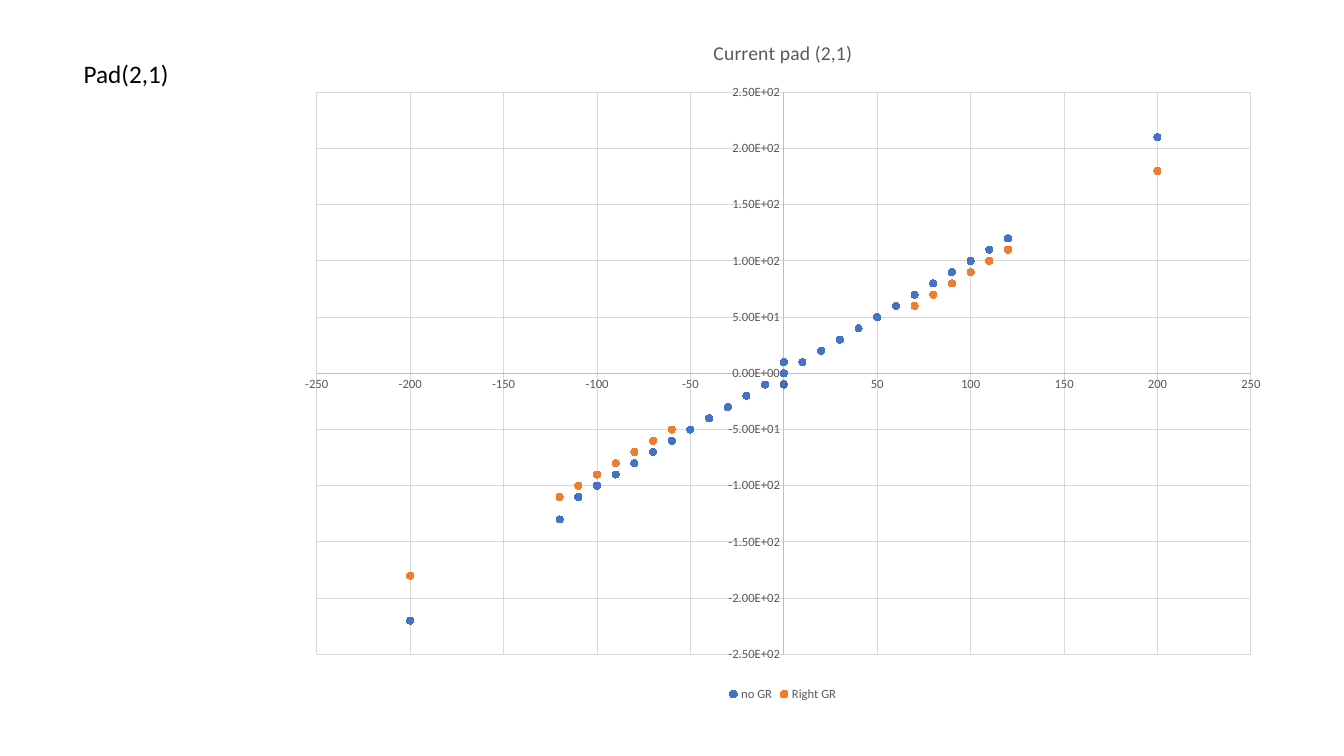
from pptx import Presentation
from pptx.chart.data import XyChartData
from pptx.dml.color import RGBColor
from pptx.enum.chart import (XL_CHART_TYPE as ChartType, XL_LEGEND_POSITION as LegendPos,
                             XL_MARKER_STYLE as Marker, XL_TICK_MARK as TickMark)
from pptx.enum.text import MSO_ANCHOR, MSO_AUTO_SIZE, PP_ALIGN
from pptx.util import Inches, Pt

FONT = "Calibri"
BLACK = RGBColor(0x00, 0x00, 0x00)
GRAY = RGBColor(0x59, 0x59, 0x59)
AXIS = RGBColor(0xBF, 0xBF, 0xBF)
GRID = RGBColor(0xD9, 0xD9, 0xD9)
BLUE = RGBColor(0x44, 0x72, 0xC4)
ORANGE = RGBColor(0xED, 0x7D, 0x31)

# Voltages and currents, rounded to tens
VOLTAGES = [-200, *range(-120, -10, 10), -10, -10, -10, 0, 0, 0, 0, 0,
            10, 10, 10, *range(20, 121, 10), 200]
CURRENTS = {
    "no GR": (BLUE, [
        -220, -130, *range(-110, -10, 10), -10, -10, -10, -10, 0, 0, 0,
        10, 10, 10, 10, *range(20, 121, 10), 210]),
    "Right GR": (ORANGE, [
        -180, *range(-110, -40, 10), *range(-50, -10, 10), -10, -10, -10, 0, 0, 0, 0,
        10, 10, 10, 10, *range(20, 61, 10), *range(60, 111, 10), 180]),
}


def set_font(font, size, color):
    font.name, font.size, font.bold = FONT, Pt(size), False
    font.color.rgb = color


def set_line(line, color):
    line.width = Pt(0.75)
    line.color.rgb = color


def add_heading(s, left, top, width, height):
    sp = s.shapes.title
    sp.left, sp.top, sp.width, sp.height = map(Inches, (left, top, width, height))
    tf = sp.text_frame
    tf.word_wrap = False
    tf.auto_size = MSO_AUTO_SIZE.SHAPE_TO_FIT_TEXT
    tf.vertical_anchor = MSO_ANCHOR.TOP
    p = tf.paragraphs[0]
    p.alignment = PP_ALIGN.LEFT
    p.line_spacing = 1.0
    r = p.add_run()
    r.text = "Pad(2,1)"
    set_font(r.font, 18, BLACK)


def style_axis(axis, limit, step, number_format):
    axis.minimum_scale, axis.maximum_scale, axis.major_unit = -limit, limit, step
    axis.major_tick_mark = axis.minor_tick_mark = TickMark.NONE
    axis.has_major_gridlines = True
    set_line(axis.major_gridlines.format.line, GRID)
    set_line(axis.format.line, AXIS)
    labels = axis.tick_labels
    labels.number_format, labels.number_format_is_linked = number_format, False
    set_font(labels.font, 9, GRAY)


def add_current_chart(s, left, top, width, height):
    data = XyChartData()
    for name, (_, currents) in CURRENTS.items():
        series = data.add_series(name)
        for voltage, current in zip(VOLTAGES, currents):
            series.add_data_point(voltage, current)
    box = map(Inches, (left, top, width, height))
    chart = s.shapes.add_chart(ChartType.XY_SCATTER, *box, data).chart
    set_font(chart.font, 10, BLACK)

    # Chart title
    chart.has_title = True
    r = chart.chart_title.text_frame.paragraphs[0].add_run()
    r.text = "Current pad (2,1)"
    set_font(r.font, 14, GRAY)
    chart.chart_title.include_in_layout = False

    # Axes and legend
    style_axis(chart.category_axis, 250, 50, "General")
    style_axis(chart.value_axis, 250, 50, "0.00E+00")
    chart.has_legend = True
    chart.legend.position = LegendPos.BOTTOM
    chart.legend.include_in_layout = False
    set_font(chart.legend.font, 9, GRAY)

    # Markers without joining lines
    plot = chart.plots[0]
    plot.vary_by_categories = False
    for series, (color, _) in zip(plot.series, CURRENTS.values()):
        series.smooth = False
        series.format.line.fill.background()
        marker = series.marker
        marker.style, marker.size = Marker.CIRCLE, 5
        marker.format.fill.solid()
        marker.format.fill.fore_color.rgb = color
        set_line(marker.format.line, color)


def main():
    prs = Presentation()
    prs.slide_width, prs.slide_height = Inches(13.33), Inches(7.5)
    s = prs.slides.add_slide(prs.slide_layouts[5])
    add_current_chart(s, 2.83, 0.16, 9.87, 6.84)
    add_heading(s, 0.73, 0.53, 1.05, 0.4)
    prs.save("out.pptx")


if __name__ == "__main__":
    main()
